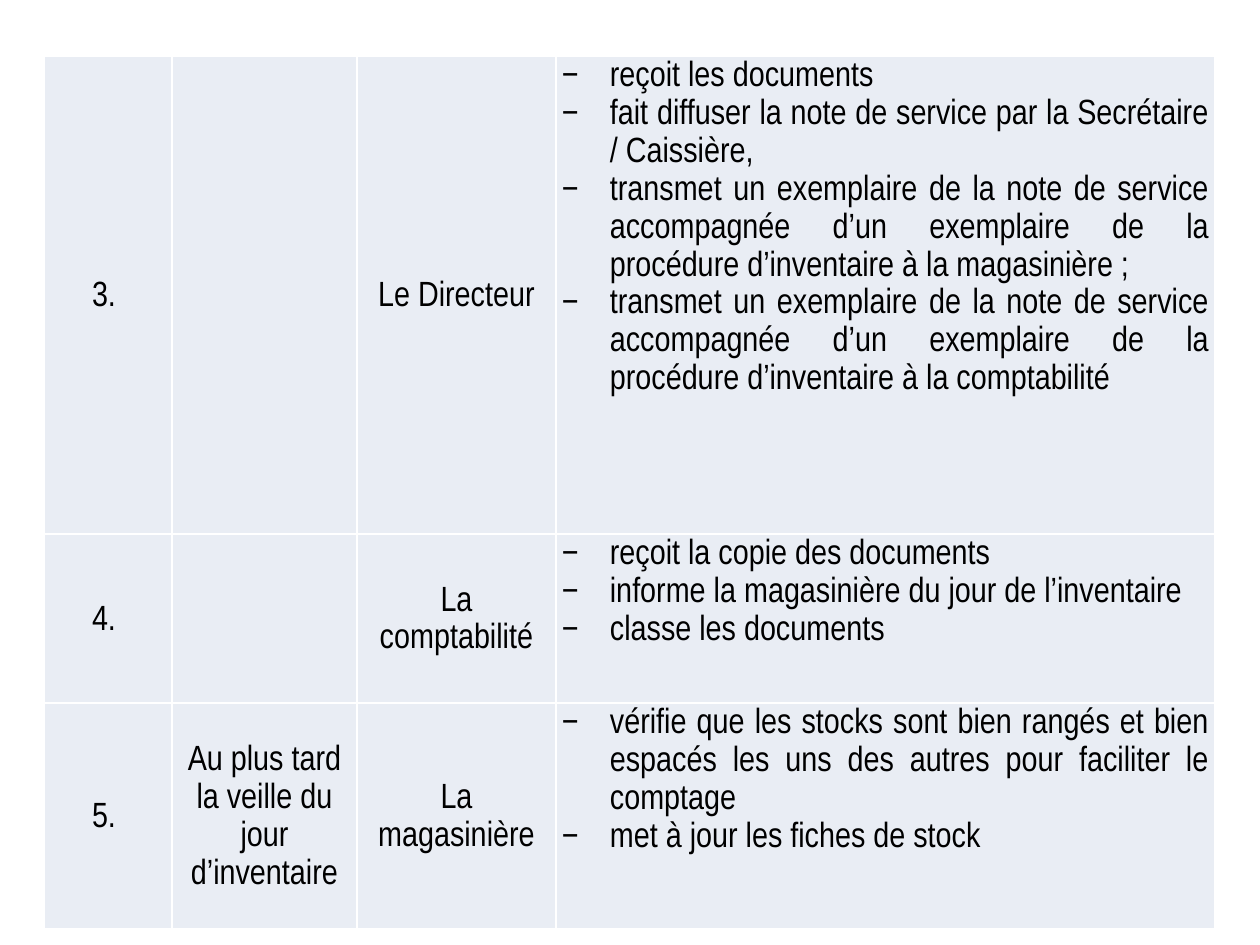
from dataclasses import dataclass

from lxml.etree import SubElement
from pptx import Presentation
from pptx.dml.color import RGBColor
from pptx.enum.text import MSO_ANCHOR, PP_ALIGN
from pptx.oxml.ns import qn
from pptx.util import Emu, Pt

EMU_PER_PX = 914400 / 126


def px(length: int) -> Emu:
    return Emu(round(length * EMU_PER_PX))


@dataclass(frozen=True)
class Theme:
    font: str = "Arial Narrow"
    size: Pt = Pt(20)
    text: str = "000000"
    cell: str = "E9EDF4"
    border: str = "FFFFFF"
    border_width: Pt = Pt(1)
    line_spacing: float = 1.15
    number_space: Pt = Pt(6)
    bullet: str = "−"
    bullet_indent: int = 48
    side_margin: int = 6


THEME = Theme()


@dataclass(frozen=True)
class Step:
    number: str
    deadline: str
    actor: str
    tasks: tuple[str, ...]
    height: int


# Inventory procedure
STEPS = (
    Step("3. ", "", "Le Directeur", (
        "reçoit les documents",
        "fait diffuser la note de service par la Secrétaire / Caissière,",
        "transmet un exemplaire de la note de service accompagnée d’un exemplaire "
        "de la procédure d’inventaire à la magasinière ;",
        "transmet un exemplaire de la note de service accompagnée d’un exemplaire "
        "de la procédure d’inventaire à la comptabilité",
    ), 478),
    Step("4. ", "", "La comptabilité", (
        "reçoit la copie des documents",
        "informe la magasinière du jour de l’inventaire",
        "classe les documents",
    ), 169),
    Step("5. ", "Au plus tard la veille du jour d’inventaire", "La magasinière", (
        "vérifie que les stocks sont bien rangés et bien espacés les uns des autres "
        "pour faciliter le comptage",
        "met à jour les fiches de stock",
    ), 226),
)
COLUMN_WIDTHS = (128, 185, 199, 659)
TABLE_LEFT, TABLE_TOP = 44, 56


def style_cell(cell) -> None:
    """Set margins, white borders and fill."""
    cell.margin_left = cell.margin_right = px(THEME.side_margin)
    cell.margin_top = cell.margin_bottom = 0
    properties = cell._tc.get_or_add_tcPr()
    for side in ("a:lnL", "a:lnR", "a:lnT", "a:lnB"):
        line = SubElement(properties, qn(side), w=str(THEME.border_width))
        SubElement(SubElement(line, qn("a:solidFill")), qn("a:srgbClr"), val=THEME.border)
    cell.fill.solid()
    cell.fill.fore_color.rgb = RGBColor.from_string(THEME.cell)


def write_paragraph(paragraph, text: str, align: PP_ALIGN) -> None:
    paragraph.alignment = align
    paragraph.line_spacing = THEME.line_spacing
    run = paragraph.add_run()
    run.text = text
    run.font.name = THEME.font
    run.font.size = THEME.size
    run.font.color.rgb = RGBColor.from_string(THEME.text)


def write_label(cell, text: str) -> None:
    cell.vertical_anchor = MSO_ANCHOR.MIDDLE
    if text:
        write_paragraph(cell.text_frame.paragraphs[0], text, PP_ALIGN.CENTER)


def write_tasks(cell, tasks: tuple[str, ...]) -> None:
    cell.vertical_anchor = MSO_ANCHOR.TOP
    frame = cell.text_frame
    for index, task in enumerate(tasks):
        paragraph = frame.add_paragraph() if index else frame.paragraphs[0]
        write_paragraph(paragraph, task, PP_ALIGN.JUSTIFY)
        properties = paragraph._p.get_or_add_pPr()
        indent = px(THEME.bullet_indent)
        properties.set("marL", str(indent))
        properties.set("indent", str(-indent))
        SubElement(properties, qn("a:buFont"), typeface=THEME.font)
        SubElement(properties, qn("a:buChar"), char=THEME.bullet)


def add_steps_table(slide, steps: tuple[Step, ...]) -> None:
    table = slide.shapes.add_table(
        len(steps), len(COLUMN_WIDTHS), px(TABLE_LEFT), px(TABLE_TOP),
        px(sum(COLUMN_WIDTHS)), px(sum(step.height for step in steps)),
    ).table
    table.first_row = table.horz_banding = False
    for column, width in zip(table.columns, COLUMN_WIDTHS):
        column.width = px(width)
    for row, step in zip(table.rows, steps):
        row.height = px(step.height)
        for cell in row.cells:
            style_cell(cell)
        number, deadline, actor, tasks = row.cells
        write_label(number, step.number)
        number.text_frame.paragraphs[0].space_before = THEME.number_space
        write_label(deadline, step.deadline)
        write_label(actor, step.actor)
        write_tasks(tasks, step.tasks)


def main() -> None:
    presentation = Presentation()
    presentation.slide_width, presentation.slide_height = px(1260), px(945)
    # Blank layout: the table fills the slide
    slide = presentation.slides.add_slide(presentation.slide_layouts[6])
    add_steps_table(slide, STEPS)
    presentation.save("out.pptx")


if __name__ == "__main__":
    main()
